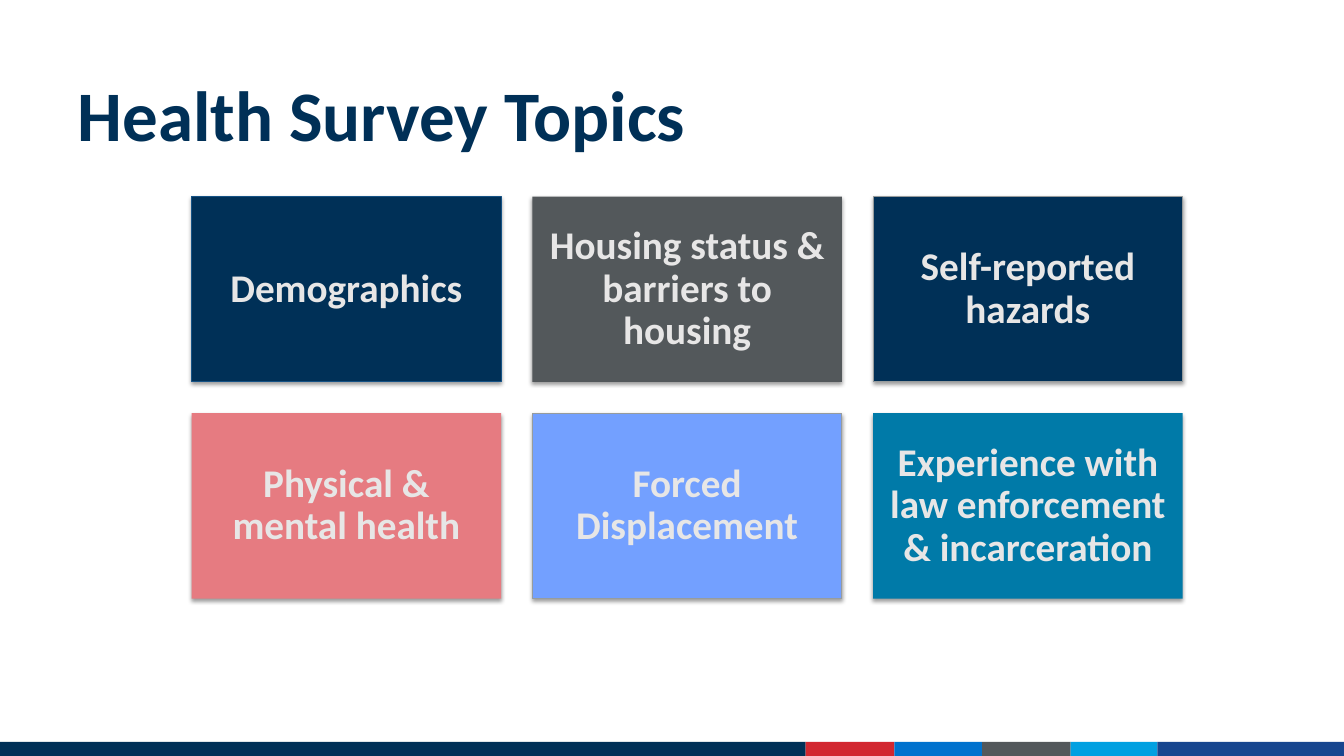
from dataclasses import dataclass
from itertools import pairwise

from lxml import etree
from pptx import Presentation
from pptx import util as u
from pptx.dml.color import RGBColor
from pptx.enum import shapes, text
from pptx.oxml.ns import qn


@dataclass(frozen=True)
class Theme:
    font: str = "Calibri"
    navy: str = "003057"
    gray: str = "53585B"
    coral: str = "E67B81"
    periwinkle: str = "73A0FF"
    teal: str = "007AA8"
    red: str = "D22730"
    blue: str = "0072CE"
    sky: str = "01A0E1"
    royal: str = "17468F"
    blue_edge: str = "155285"
    gray_edge: str = "979C9D"
    card_text: str = "E7E6E6"
    shadow: str = "000000"
    title_size: float = 50.7
    card_size: float = 28


THEME = Theme()
SLIDE_WIDTH, SLIDE_HEIGHT = 13.33, 7.5

# Each card: wording, fill, edge
CARDS = [
    ("Demographics", THEME.navy, THEME.blue_edge),
    ("Housing status & barriers to housing", THEME.gray, None),
    ("Self-reported hazards", THEME.navy, THEME.gray_edge),
    ("Physical & mental health", THEME.coral, None),
    ("Forced Displacement", THEME.periwinkle, THEME.gray_edge),
    ("Experience with law enforcement & incarceration", THEME.teal, None),
]
CARD_COLUMNS = 3
CARD_WIDTH, CARD_HEIGHT, CARD_GAP = 3.07, 1.84, 0.31

# Footer colours, and the edges between them
STRIPE_COLORS = [THEME.navy, THEME.red, THEME.blue, THEME.gray, THEME.sky, THEME.royal]
STRIPE_EDGES = [0, 7.99, 8.87, 9.74, 10.62, 11.48, SLIDE_WIDTH]


def apply_format(target, values):
    for name, value in values.items():
        setattr(target, name, value)


def write_text(shape, wording, size, color, frame_format, para_format):
    frame = shape.text_frame
    apply_format(frame, {"word_wrap": True, "auto_size": text.MSO_AUTO_SIZE.NONE, **frame_format})
    para = frame.paragraphs[0]
    apply_format(para, para_format)
    span = para.add_run()
    span.text = wording
    apply_format(span.font, {"name": THEME.font, "size": u.Pt(size), "bold": True})
    span.font.color.rgb = RGBColor.from_string(color)


def add_rectangle(page, box, fill, edge=None):
    shape = page.shapes.add_shape(shapes.MSO_SHAPE.RECTANGLE, *map(u.Inches, box))
    shape.shadow.inherit = False
    shape.fill.solid()
    shape.fill.fore_color.rgb = RGBColor.from_string(fill)
    if edge:
        shape.line.color.rgb = RGBColor.from_string(edge)
        shape.line.width = u.Pt(0.75)
    else:
        shape.line.fill.background()
    return shape


def add_soft_shadow(shape):
    effects = shape._element.spPr.find(qn("a:effectLst"))
    shadow = etree.SubElement(
        effects, qn("a:outerShdw"), blurRad=str(u.Pt(3.1)), dist=str(u.Pt(1.6)),
        dir="5400000", algn="ctr", rotWithShape="0")
    color = etree.SubElement(shadow, qn("a:srgbClr"), val=THEME.shadow)
    etree.SubElement(color, qn("a:alpha"), val="38000")


def place_title(page, box, wording):
    title = page.shapes.title
    names = ("left", "top", "width", "height")
    apply_format(title, dict(zip(names, map(u.Inches, box))))
    write_text(title, wording, THEME.title_size, THEME.navy,
               {"vertical_anchor": text.MSO_ANCHOR.BOTTOM},
               {"alignment": text.PP_ALIGN.LEFT, "line_spacing": 0.55})


def add_cards(page, left, top):
    margins = dict.fromkeys(
        ("margin_left", "margin_top", "margin_right", "margin_bottom"), u.Inches(0.12))
    for index, (wording, fill, edge) in enumerate(CARDS):
        row, column = divmod(index, CARD_COLUMNS)
        box = (left + column * (CARD_WIDTH + CARD_GAP), top + row * (CARD_HEIGHT + CARD_GAP),
               CARD_WIDTH, CARD_HEIGHT)
        card = add_rectangle(page, box, fill, edge)
        add_soft_shadow(card)
        write_text(card, wording, THEME.card_size, THEME.card_text,
                   {"vertical_anchor": text.MSO_ANCHOR.MIDDLE, **margins},
                   {"alignment": text.PP_ALIGN.CENTER, "line_spacing": 0.9})


def add_footer_stripe(page, top, height):
    for color, (start, end) in zip(STRIPE_COLORS, pairwise(STRIPE_EDGES)):
        add_rectangle(page, (start, top, end - start, height), color)


def main():
    deck = Presentation()
    deck.slide_width = u.Inches(SLIDE_WIDTH)
    deck.slide_height = u.Inches(SLIDE_HEIGHT)
    page = deck.slides.add_slide(deck.slide_layouts[5])  # title only

    add_footer_stripe(page, SLIDE_HEIGHT - 0.14, 0.14)
    add_cards(page, 1.9, 1.95)
    place_title(page, (0.67, 0.3, 12, 1.25), "Health Survey Topics")

    deck.save("out.pptx")


if __name__ == "__main__":
    main()
